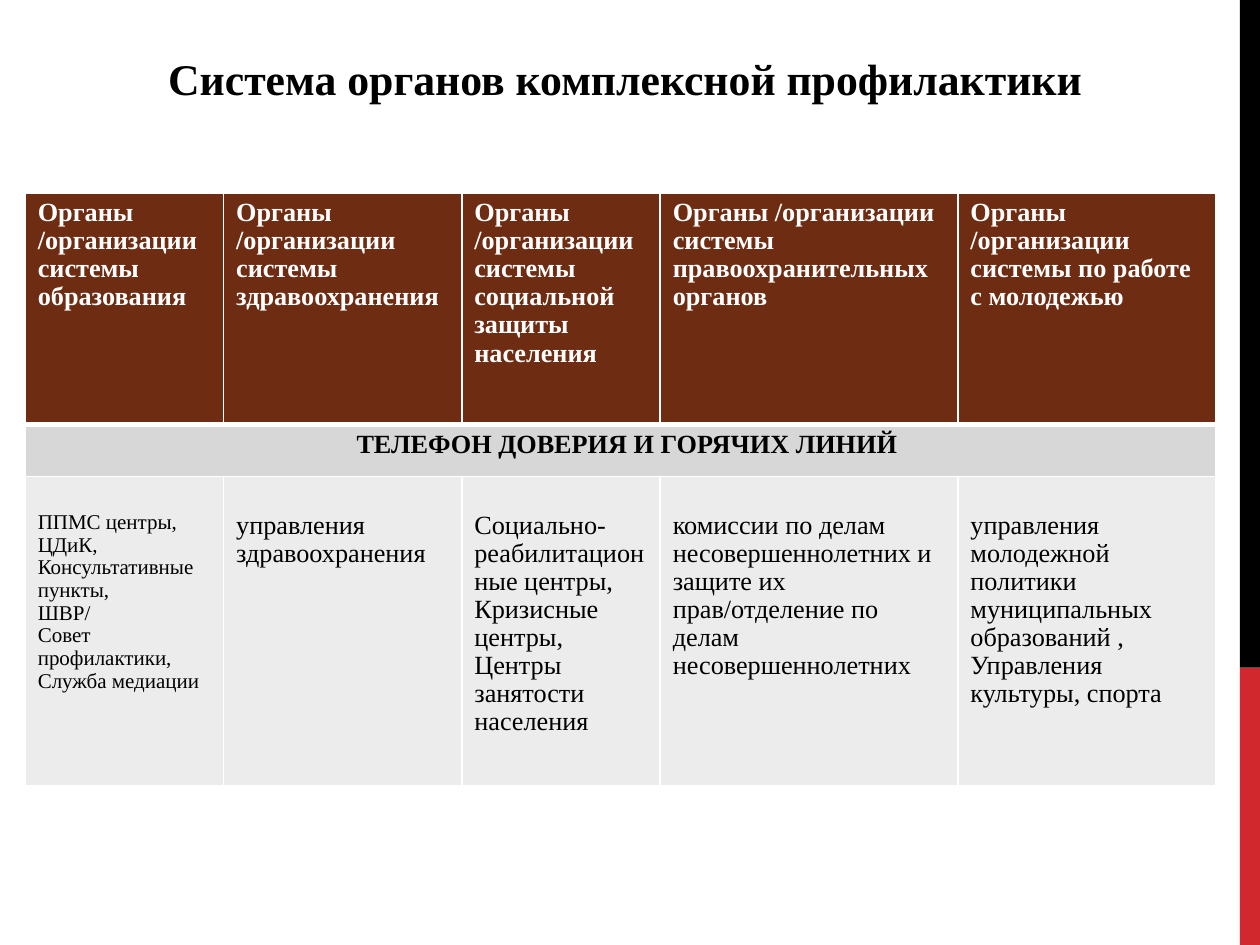
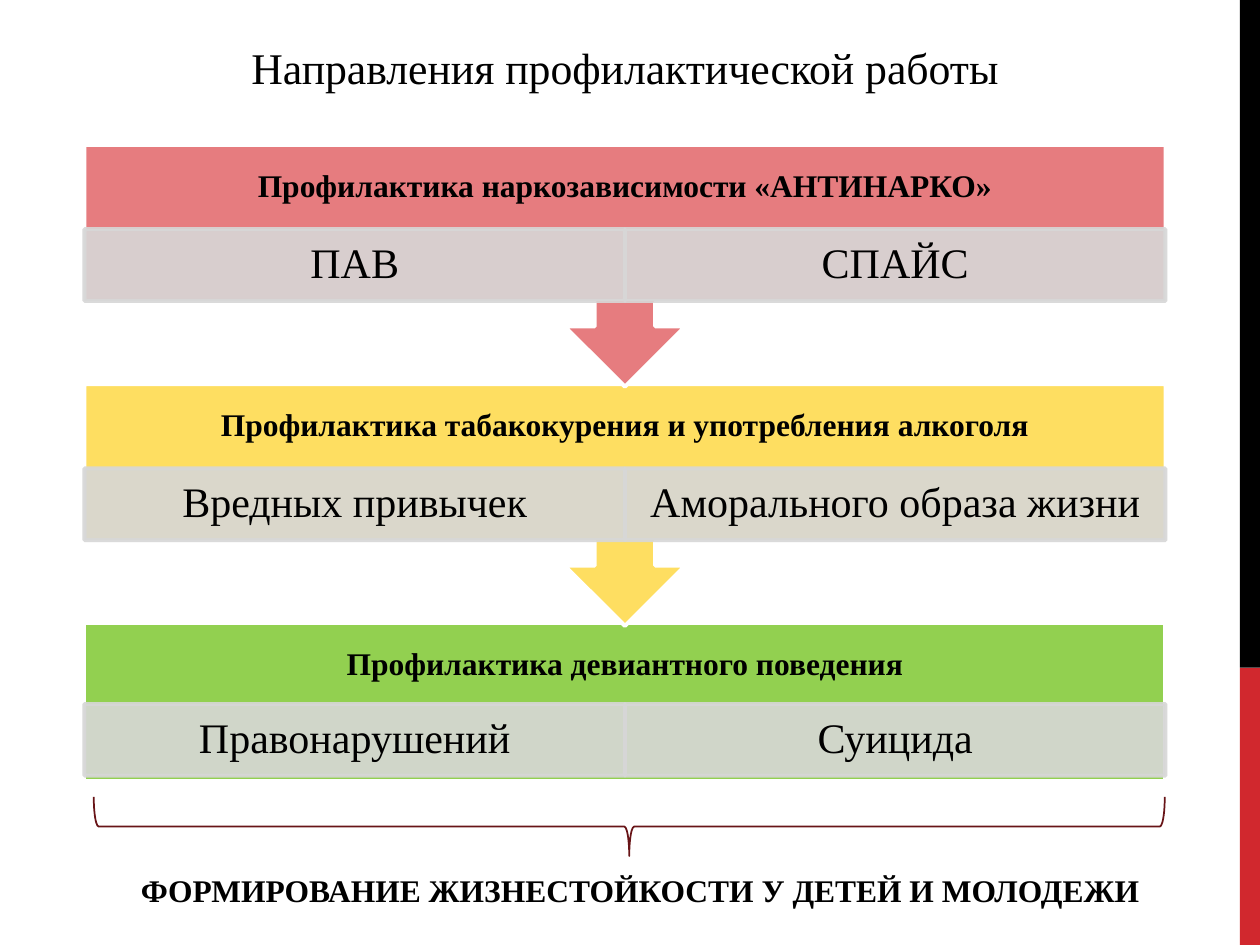
from lxml.etree import SubElement
from pptx import Presentation
from pptx.dml.color import RGBColor
from pptx.enum.shapes import MSO_SHAPE
from pptx.enum.text import MSO_ANCHOR, PP_ALIGN
from pptx.oxml import parse_xml
from pptx.oxml.ns import nsdecls, qn
from pptx.util import Pt

FONT = "Times New Roman"
BLACK, WHITE, RED, GREY = "000000", "FFFFFF", "D1282E", "D7D7D7"
HEADER, BODY, BRACE = "6E2C12", "ECECEC", "681417"
SLIDE_W, SLIDE_H = 720, 540
CONTENT_X, CONTENT_W = 48.24, 617.76

COLUMN_WIDTHS = [113.4, 136.1, 113.4, 170.1, 147.4]
ROW_HEIGHTS = [132.5, 29.5, 177]
BODIES = [
    "Органы /организации системы образования",
    "Органы /организации системы здравоохранения",
    "Органы /организации системы социальной защиты населения",
    "Органы /организации системы правоохранительных органов",
    "Органы /организации системы по работе с молодежью",
]
HOTLINE = "ТЕЛЕФОН ДОВЕРИЯ И ГОРЯЧИХ ЛИНИЙ"
SERVICES = [
    ["ППМС центры,", "ЦДиК,", "Консультативные пункты,", "ШВР/",
     "Совет профилактики,", "Служба медиации"],
    ["управления здравоохранения"],
    ["Социально-реабилитационные центры,", "Кризисные центры,",
     "Центры занятости населения"],
    ["комиссии по делам несовершеннолетних и защите их прав/отделение "
     "по делам несовершеннолетних"],
    ["управления молодежной политики муниципальных образований ,",
     "Управления культуры, спорта"],
]
STAGES = [
    ("Профилактика наркозависимости «АНТИНАРКО»", "E67C7F", ["ПАВ", "СПАЙС"]),
    ("Профилактика табакокурения и употребления алкоголя", "FEDE61",
     ["Вредных привычек", "Аморального образа жизни"]),
    ("Профилактика девиантного поведения", "92D050",
     ["Правонарушений", "Суицида"]),
]


def rgb(value):
    """Turn a hex string into a colour."""
    return RGBColor.from_string(value)


def write(tf, lines, size, color=BLACK, bold=False, align=PP_ALIGN.CENTER, spacing=None):
    """Write each line as a paragraph with one run."""
    for i, line in enumerate(lines):
        p = tf.add_paragraph() if i else tf.paragraphs[0]
        p.alignment, p.line_spacing = align, spacing
        r = p.add_run()
        r.text = line
        r.font.name, r.font.size, r.font.bold = FONT, Pt(size), bold
        r.font.color.rgb = rgb(color)


def inset(tf, across, down):
    """Set equal side margins and equal top and bottom margins."""
    tf.margin_left = tf.margin_right = Pt(across)
    tf.margin_top = tf.margin_bottom = Pt(down)


def add_shape(s, kind, box, fill=None, line=None, width=2.25):
    """Add a preset shape without shadow."""
    sp = s.shapes.add_shape(kind, *map(Pt, box))
    sp.shadow.inherit = False
    if fill:
        sp.fill.solid()
        sp.fill.fore_color.rgb = rgb(fill)
    else:
        sp.fill.background()
    if line:
        sp.line.color.rgb = rgb(line)
        sp.line.width = Pt(width)
    else:
        sp.line.fill.background()
    return sp


def add_label(s, box, text, size, bold=False, wrap=True, align=PP_ALIGN.CENTER):
    """Add a text box with one line of text."""
    tf = s.shapes.add_textbox(*map(Pt, box)).text_frame
    tf.word_wrap = wrap
    write(tf, [text], size, bold=bold, align=align)
    return tf


def add_base(prs, title, top, bold):
    """Add a slide with the side bands and a title."""
    s = prs.slides.add_slide(prs.slide_layouts[6])
    x, split = 708.5, 381.6
    add_shape(s, MSO_SHAPE.RECTANGLE, (x, split, SLIDE_W - x, SLIDE_H - split), RED)
    add_shape(s, MSO_SHAPE.RECTANGLE, (x, 0, SLIDE_W - x, split), BLACK)
    add_label(s, (CONTENT_X, top, CONTENT_W, 37.5), title, 25, bold)
    return s


def style_cell(cell, fill, top=1, bottom=1):
    """Fill a cell and draw its white borders."""
    cell.fill.solid()
    cell.fill.fore_color.rgb = rgb(fill)
    tc_pr = cell._tc.get_or_add_tcPr()
    for i, (side, width) in enumerate(zip("LRTB", (1, 1, top, bottom))):
        tc_pr.insert(i, parse_xml(
            f'<a:ln{side} {nsdecls("a")} w="{Pt(width)}"><a:solidFill>'
            f'<a:srgbClr val="{WHITE}"/></a:solidFill></a:ln{side}>'))


def add_bodies_table(s, x, y):
    """Draw the table of bodies and services from its top left corner."""
    size = (sum(COLUMN_WIDTHS), sum(ROW_HEIGHTS))
    shape = s.shapes.add_table(3, len(BODIES), *map(Pt, (x, y, *size)))
    table = shape.table
    table.first_row = table.horz_banding = False
    for row, height in zip(table.rows, ROW_HEIGHTS):
        row.height = Pt(height)
    for i, width in enumerate(COLUMN_WIDTHS):
        table.columns[i].width = Pt(width)
        head, middle, service = (table.cell(row, i) for row in range(3))
        style_cell(head, HEADER, bottom=3)
        style_cell(middle, GREY, top=3)
        style_cell(service, BODY)
        write(head.text_frame, [BODIES[i]], 15, WHITE, True, PP_ALIGN.LEFT, 0.97)
        service.margin_top = Pt(20.2)
        write(service.text_frame, SERVICES[i], 15 if i else 12,
              align=PP_ALIGN.LEFT, spacing=0.97)
    hotline = table.cell(1, 0)
    hotline.merge(table.cell(1, len(BODIES) - 1))
    hotline.margin_left = Pt(14.7)
    write(hotline.text_frame, [HOTLINE], 15, bold=True, spacing=0.97)


def add_stage(s, box, stage, last):
    """Draw a stage: heading, two topics and an arrow unless it is the last."""
    x, y, w, h = box
    heading, color, topics = stage
    if last:
        add_shape(s, MSO_SHAPE.RECTANGLE, (x, y, w, 90), color, WHITE)
    else:
        sp = add_shape(s, MSO_SHAPE.UP_ARROW_CALLOUT, box, color, WHITE)
        sp.rotation = 180
    tf = add_label(s, (x, y, w, 48.2), heading, 18, True)
    tf.vertical_anchor = MSO_ANCHOR.MIDDLE
    tf.paragraphs[0].line_spacing = 0.9
    inset(tf, 10, 10)
    topic_y = y + (46.1 if last else 48.2)
    topic_w = w / len(topics)
    for i, topic in enumerate(topics):
        sp = add_shape(s, MSO_SHAPE.RECTANGLE,
                       (x + i * topic_w, topic_y, topic_w, 41), GREY, GREY)
        for clr in sp._element.spPr.iter(qn("a:srgbClr")):
            SubElement(clr, qn("a:alpha"), val="90000")
        tf = sp.text_frame
        tf.word_wrap = True
        tf.vertical_anchor = MSO_ANCHOR.MIDDLE
        inset(tf, 13.5, 2.2)
        write(tf, [topic], 24, spacing=0.9)


def add_outcome(s, x, y, w):
    """Draw the brace and the outcome below it."""
    depth = 33.8
    sp = add_shape(s, MSO_SHAPE.LEFT_BRACE,
                   (x + (w - depth) / 2, y + (depth - w) / 2, depth, w), None, BRACE, 1)
    sp.rotation = 270
    add_label(s, (x + 19.8, y + 38.6, 591, 29),
              "ФОРМИРОВАНИЕ ЖИЗНЕСТОЙКОСТИ У ДЕТЕЙ И МОЛОДЕЖИ",
              18, True, False, PP_ALIGN.LEFT)


def main():
    """Build both slides."""
    prs = Presentation()
    prs.slide_width, prs.slide_height = Pt(SLIDE_W), Pt(SLIDE_H)
    s = add_base(prs, "Система органов комплексной профилактики", 26, True)
    add_bodies_table(s, 14.4, 110.2)
    s = add_base(prs, "Направления профилактической работы", 19.5, False)
    for i, stage in reversed(list(enumerate(STAGES))):
        box = (CONTENT_X, 82.8 + i * 136.7, CONTENT_W, 138.2)
        add_stage(s, box, stage, i == len(STAGES) - 1)
    add_outcome(s, 53.6, 455.4, 612)
    prs.save("out.pptx")


if __name__ == "__main__":
    main()
